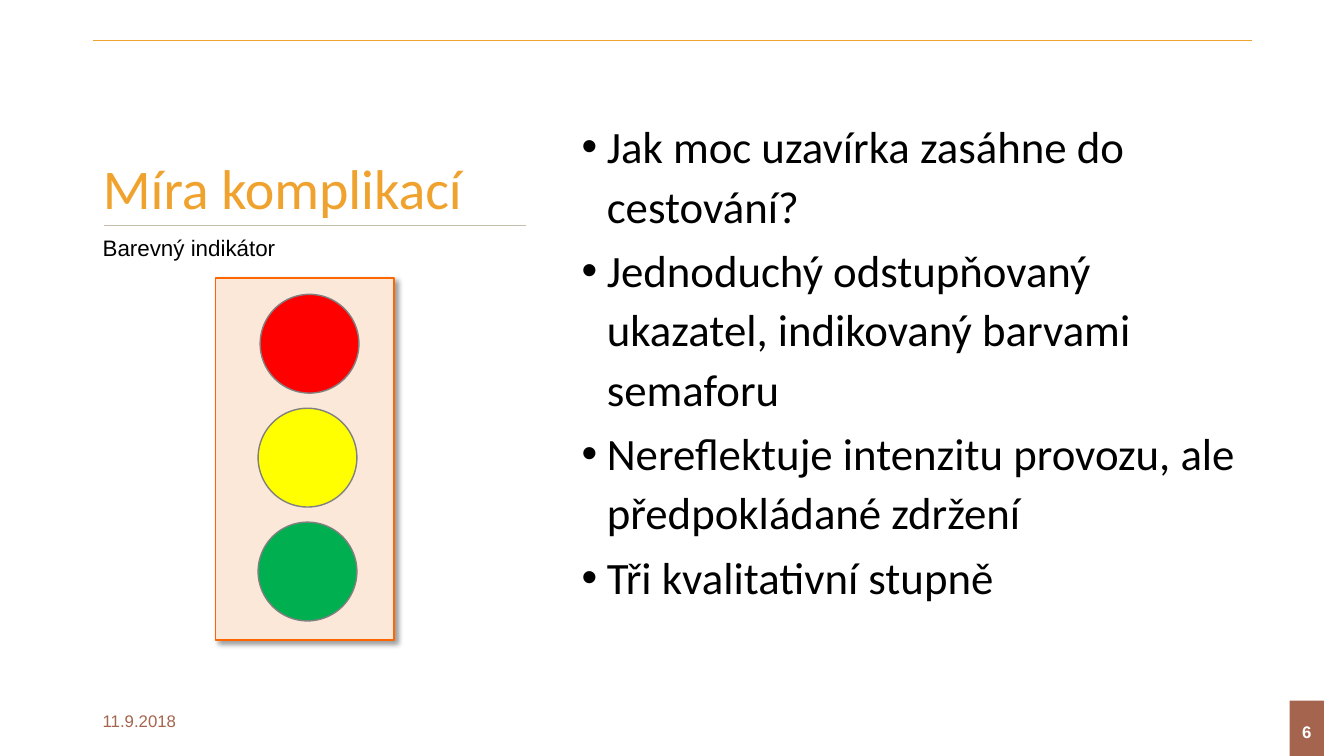
from lxml.etree import SubElement
from pptx import Presentation
from pptx.dml.color import RGBColor
from pptx.enum.shapes import MSO_CONNECTOR, MSO_SHAPE
from pptx.enum.text import MSO_ANCHOR, PP_ALIGN
from pptx.oxml.ns import qn
from pptx.util import Inches, Pt

TITLE = "Míra komplikací"
SUBTITLE = "Barevný indikátor"
POINTS = [
    "Jak moc uzavírka zasáhne do cestování?",
    "Jednoduchý odstupňovaný ukazatel, indikovaný barvami semaforu",
    "Nereflektuje intenzitu provozu, ale předpokládané zdržení",
    "Tři kvalitativní stupně",
]
DATE = "11.9.2018"
PAGE = "6"
LIGHTS = [("FF0000", 2.58), ("FFFF00", 2.56), ("00B050", 2.56)]
LIGHT_TOP, LIGHT_STEP, LIGHT_SIZE = 2.92, 1.13, 0.98
RULES = [(0.92, 12.42, 0.4, "F0A22E"), (1.03, 5.22, 2.24, "C7BFAC")]


def color(hex_code):
    return RGBColor.from_string(hex_code)


def place(shape, left, top, width, height):
    shape.left, shape.top = Inches(left), Inches(top)
    shape.width, shape.height = Inches(width), Inches(height)


def write(shape, *texts, size, ink, font="Arial", bold=False, align=PP_ALIGN.LEFT,
          anchor=MSO_ANCHOR.TOP, spacing=None, before=0, bullet=None, wrap=True):
    frame = shape.text_frame
    frame.word_wrap = wrap
    frame.vertical_anchor = anchor
    for index, text in enumerate(texts):
        paragraph = frame.paragraphs[0] if index == 0 else frame.add_paragraph()
        if bullet:
            properties = paragraph._p.get_or_add_pPr()
            properties.set("marL", str(Inches(0.25)))
            properties.set("indent", str(-Inches(0.25)))
            SubElement(properties, qn("a:buFont"), typeface="Arial")
            SubElement(properties, qn("a:buChar"), char=bullet)
        paragraph.alignment = align
        paragraph.line_spacing = spacing
        paragraph.space_before = Pt(before if index else 0)
        run = paragraph.add_run()
        run.text = text
        run.font.name, run.font.size, run.font.bold = font, Pt(size), bold
        run.font.color.rgb = color(ink)


def add_text(slide, box, *texts, **style):
    holder = slide.shapes.add_textbox(*map(Inches, box))
    write(holder, *texts, **style)


def add_panel(slide, kind, box, fill, outline=None):
    panel = slide.shapes.add_shape(kind, *map(Inches, box))
    panel.shadow.inherit = False
    panel.fill.solid()
    panel.fill.fore_color.rgb = color(fill)
    if outline:
        panel.line.color.rgb = color(outline)
        panel.line.width = Pt(1)
    else:
        panel.line.fill.background()
    return panel


def add_rule(slide, start, end, y, ink):
    rule = slide.shapes.add_connector(
        MSO_CONNECTOR.STRAIGHT, Inches(start), Inches(y), Inches(end), Inches(y))
    rule.line.color.rgb = color(ink)
    rule.line.width = Pt(0.5)
    SubElement(rule._element.spPr, qn("a:effectLst"))


def cast_shadow(panel):
    effects = panel._element.spPr.find(qn("a:effectLst"))
    shadow = SubElement(effects, qn("a:outerShdw"), blurRad=str(Pt(4)), dist=str(Pt(3)),
                        dir="2700000", algn="tl", rotWithShape="0")
    shade = SubElement(shadow, qn("a:srgbClr"), val="000000")
    SubElement(shade, qn("a:alpha"), val="40000")


def main():
    deck = Presentation()
    deck.slide_width, deck.slide_height = Inches(13.33), Inches(7.5)
    slide = deck.slides.add_slide(deck.slide_layouts[5])

    place(slide.shapes.title, 0.92, 0.5, 4.3, 1.75)
    write(slide.shapes.title, TITLE, size=40, ink="F0A22E", font="Calibri",
          anchor=MSO_ANCHOR.BOTTOM, spacing=0.9)
    add_text(slide, (5.67, 1.08, 6.75, 5.33), *POINTS, size=32, ink="000000",
             font="Calibri", spacing=1.1, before=4, bullet="•")
    add_text(slide, (0.92, 2.25, 4.3, 4.17), SUBTITLE, size=16, ink="000000", spacing=1.1)
    add_text(slide, (0.92, 6.95, 3, 0.4), DATE, size=12, ink="A5644E",
             anchor=MSO_ANCHOR.MIDDLE)

    page_tab = add_panel(slide, MSO_SHAPE.RECTANGLE, (12.79, 6.95, 0.34, 0.63), "A5644E")
    page_tab.text_frame.margin_left = page_tab.text_frame.margin_right = 0
    write(page_tab, PAGE, size=12, ink="FFFFFF", bold=True, align=PP_ALIGN.CENTER,
          anchor=MSO_ANCHOR.MIDDLE, wrap=False)

    housing = add_panel(slide, MSO_SHAPE.RECTANGLE, (2.14, 2.76, 1.77, 3.59),
                        "FCE8D8", "FF6600")
    cast_shadow(housing)
    for index, (light, left) in enumerate(LIGHTS):
        top = LIGHT_TOP + index * LIGHT_STEP
        add_panel(slide, MSO_SHAPE.OVAL, (left, top, LIGHT_SIZE, LIGHT_SIZE),
                  light, "808080")
    for rule in RULES:
        add_rule(slide, *rule)

    deck.save("out.pptx")


if __name__ == "__main__":
    main()
